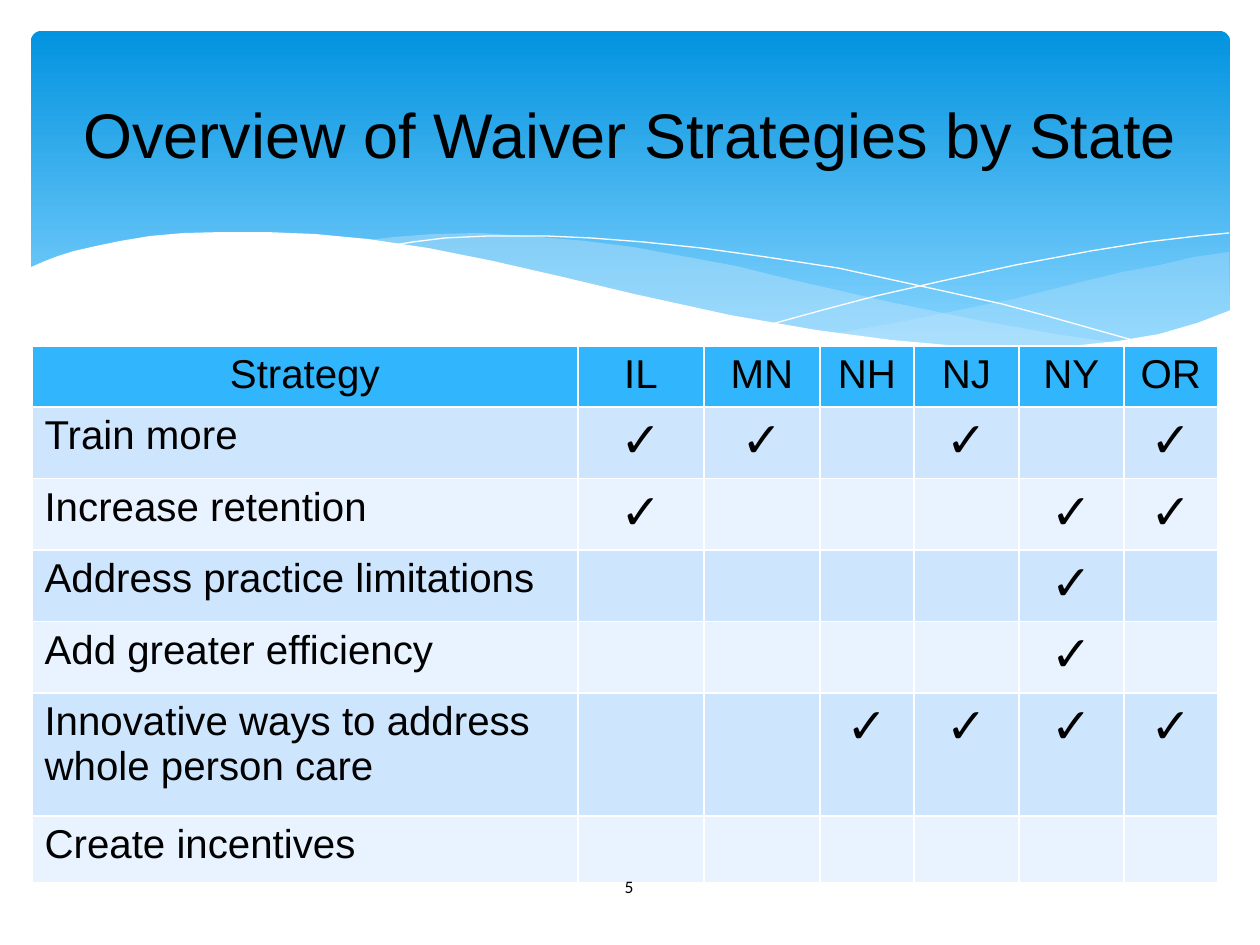
from lxml import etree
from pptx import Presentation
from pptx.dml.color import RGBColor
from pptx.enum.shapes import MSO_SHAPE
from pptx.enum.text import MSO_ANCHOR, PP_ALIGN
from pptx.oxml.ns import qn
from pptx.util import Emu, Pt

ROUNDED = MSO_SHAPE.ROUNDED_RECTANGLE
MIDDLE = MSO_ANCHOR.MIDDLE
LEFT, CENTER = PP_ALIGN.LEFT, PP_ALIGN.CENTER
EMU_PER_PX = 914400 / 126

BLACK, WHITE = "000000", "FFFFFF"
HEADER_BLUE = "31B6FD"
BAND_COLORS = ["CEE5FE", "E8F3FF"]
WAVE_BLUE = "C6E7FC"
CHECK = "✓"

RIGHT_WAVE = [
    (1229, 252), (1194, 257), (1160, 265), (1123, 272), (1085, 281), (1014, 299),
    (949, 312), (890, 324), (833, 334), (871, 339), (906, 343), (954, 348),
    (1012, 350), (1063, 349), (1110, 344), (1150, 336), (1187, 326), (1230, 311),
]
MIDDLE_WAVE = [
    (1125, 344), (1055, 334), (977, 320), (890, 302), (793, 280), (736, 266),
    (682, 256), (633, 247), (586, 241), (529, 236), (479, 233), (433, 234),
    (394, 237), (360, 241), (407, 247), (456, 256), (509, 266), (566, 280),
    (668, 302), (736, 318), (799, 329), (857, 338), (910, 345), (974, 349),
    (1031, 350), (1080, 349),
]
FALLING_LINE = [
    (389, 246), (413, 242), (445, 238), (488, 236), (546, 236), (591, 238),
    (643, 242), (701, 248), (766, 257), (838, 268), (916, 285), (1002, 304),
    (1047, 316), (1143, 343),
]
RISING_LINE = [
    (772, 324), (823, 310), (876, 296), (942, 281), (1016, 265), (1091, 251),
    (1147, 242), (1198, 236), (1229, 233),
]
WHITE_WAVE = [
    (1231, 310), (1197, 323), (1159, 334), (1118, 341), (1071, 346), (1019, 349),
    (959, 346), (892, 340), (816, 330), (730, 315), (634, 294), (563, 277),
    (493, 261), (428, 248), (368, 239), (315, 234), (266, 232), (223, 232),
    (184, 233), (150, 236), (120, 241), (96, 246), (74, 251), (58, 256),
    (45, 261), (29, 268), (29, 415), (1231, 415),
]

STATES = ["IL", "MN", "NH", "NJ", "NY", "OR"]
STRATEGIES = [
    ("Train more", ["IL", "MN", "NJ", "OR"]),
    ("Increase retention", ["IL", "NY", "OR"]),
    ("Address practice limitations", ["NY"]),
    ("Add greater efficiency", ["NY"]),
    ("Innovative ways to address whole person care", ["NH", "NJ", "NY", "OR"]),
    ("Create incentives", []),
]
COLUMN_WIDTHS = [546, 126, 116, 94, 105, 105, 94]
ROW_HEIGHTS = [58, 67, 67, 67, 67, 123, 67]


def px(value):
    return Emu(round(value * EMU_PER_PX))


def rgb(value):
    return RGBColor.from_string(value)


def write_text(frame, text, size=23, font="Arial", color=BLACK, align=LEFT):
    paragraph = frame.paragraphs[0]
    paragraph.alignment = align
    run = paragraph.add_run()
    run.text = text
    run.font.size = Pt(size)
    run.font.name = font
    run.font.bold = False
    run.font.color.rgb = rgb(color)


def add_text_box(slide, box, text, **text_format):
    frame = slide.shapes.add_textbox(*map(px, box)).text_frame
    frame.word_wrap = True
    frame.vertical_anchor = MIDDLE
    write_text(frame, text, align=CENTER, **text_format)


def add_banner(slide):
    banner = slide.shapes.add_shape(ROUNDED, px(31), px(31), px(1199), px(340))
    banner.shadow.inherit = False
    banner.adjustments[0] = 0.03
    banner.line.fill.background()
    banner.fill.gradient()
    banner.fill.gradient_angle = 270
    stops = [(0, "0293E0"), (0.9, "83D3FE")]
    for stop, (position, color) in zip(banner.fill.gradient_stops, stops):
        stop.position = position
        stop.color.rgb = rgb(color)


def add_freeform(slide, points, closed):
    builder = slide.shapes.build_freeform(*points[0], scale=EMU_PER_PX)
    builder.add_line_segments(points[1:], close=closed)
    shape = builder.convert_to_shape()
    shape.shadow.inherit = False
    return shape


def add_wave(slide, points, color, opacity=100):
    wave = add_freeform(slide, points, True)
    wave.line.fill.background()
    wave.fill.solid()
    wave.fill.fore_color.rgb = rgb(color)
    if opacity < 100:
        color_element = wave.fill._xPr.find(qn("a:solidFill"))[0]
        etree.SubElement(color_element, qn("a:alpha"), val=str(opacity * 1000))


def add_curve(slide, points):
    curve = add_freeform(slide, points, False)
    curve.fill.background()
    curve.line.color.rgb = rgb(WHITE)
    curve.line.width = Pt(0)


def fill_cell(cell, color, text, **text_format):
    cell.fill.solid()
    cell.fill.fore_color.rgb = rgb(color)
    if text:
        write_text(cell.text_frame, text, **text_format)


def add_strategy_table(slide):
    frame = slide.shapes.add_table(
        len(ROW_HEIGHTS), len(COLUMN_WIDTHS), px(32), px(346),
        px(sum(COLUMN_WIDTHS)), px(sum(ROW_HEIGHTS)))
    table = frame.table
    for column, width in zip(table.columns, COLUMN_WIDTHS):
        column.width = px(width)
    for row, height in zip(table.rows, ROW_HEIGHTS):
        row.height = px(height)
    for index, heading in enumerate(["Strategy"] + STATES):
        fill_cell(table.cell(0, index), HEADER_BLUE, heading, align=CENTER)
    for row_index, (strategy, adopters) in enumerate(STRATEGIES, 1):
        band = BAND_COLORS[(row_index - 1) % 2]
        fill_cell(table.cell(row_index, 0), band, strategy)
        for column_index, state in enumerate(STATES, 1):
            mark = CHECK if state in adopters else ""
            fill_cell(table.cell(row_index, column_index), band, mark,
                      size=28, align=CENTER)


def main():
    presentation = Presentation()
    presentation.slide_width = px(1260)
    presentation.slide_height = px(945)
    slide = presentation.slides.add_slide(presentation.slide_layouts[6])
    add_banner(slide)
    add_wave(slide, RIGHT_WAVE, WAVE_BLUE, opacity=29)
    add_wave(slide, MIDDLE_WAVE, WAVE_BLUE, opacity=40)
    add_curve(slide, FALLING_LINE)
    add_curve(slide, RISING_LINE)
    add_wave(slide, WHITE_WAVE, WHITE)
    add_text_box(slide, (63, 47, 1134, 173),
                 "Overview of Waiver Strategies by State", size=36)
    add_strategy_table(slide)
    add_text_box(slide, (549, 862, 160, 50), "5", size=10, font="Calibri")
    presentation.save("out.pptx")


if __name__ == "__main__":
    main()
